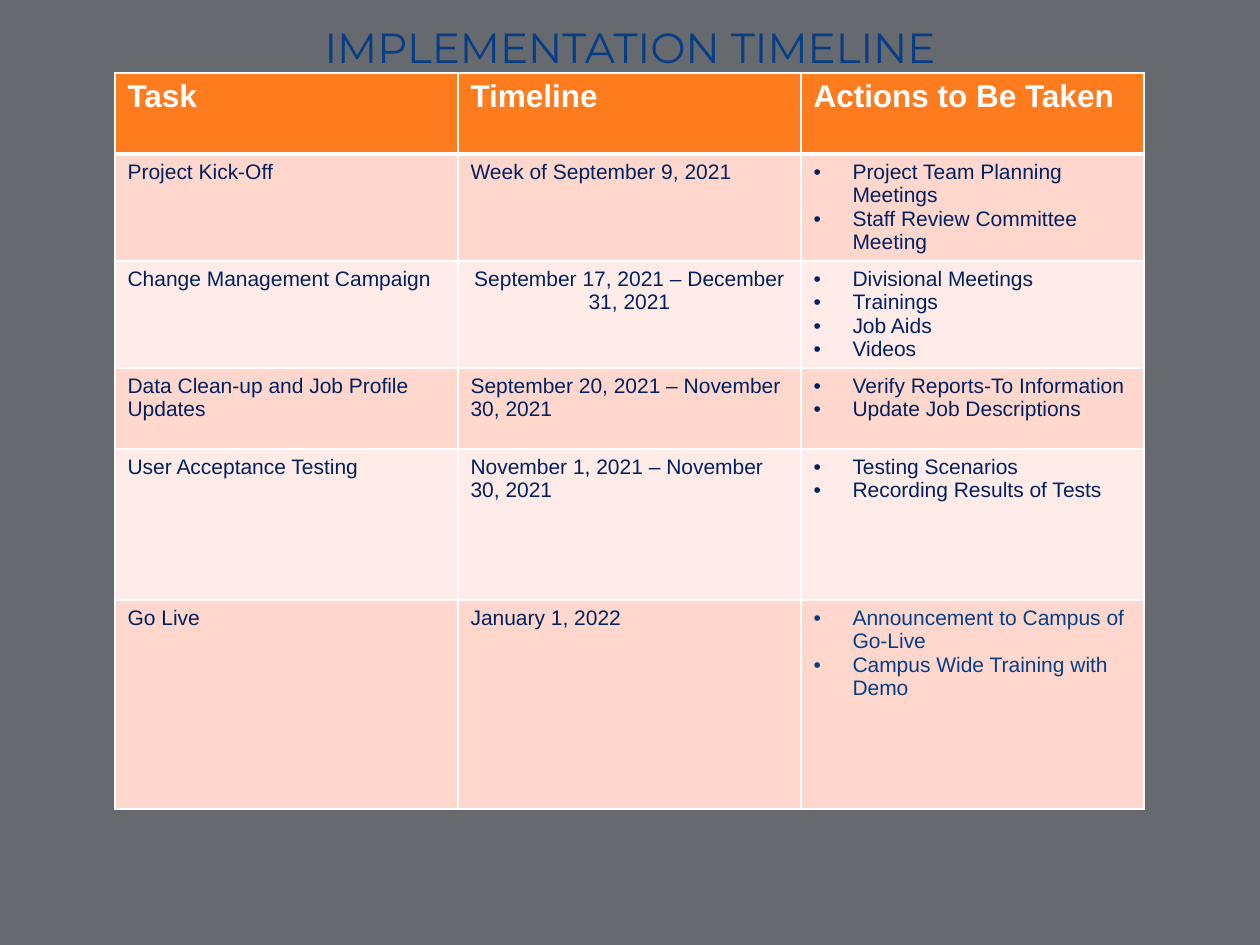
from lxml import etree
from pptx import Presentation
from pptx.dml.color import RGBColor
from pptx.enum.text import MSO_ANCHOR, MSO_AUTO_SIZE, PP_ALIGN
from pptx.oxml import parse_xml
from pptx.oxml.ns import nsdecls, qn
from pptx.util import Pt

MIDDLE, NOFIT, CENTER = MSO_ANCHOR.MIDDLE, MSO_AUTO_SIZE.NONE, PP_ALIGN.CENTER
COLORS = {"back": "66696E", "title": "053E87", "head": "FE7C1E", "white": "FFFFFF",
          "navy": "002060", "odd": "FFD7CD", "even": "FFECE8"}
HEADS = ["Task", "Timeline", "Actions to Be Taken"]
TASKS = [
    ("Project Kick-Off", "Week of September 9, 2021",
     "Project Team Planning Meetings\nStaff Review Committee Meeting"),
    ("Change Management Campaign", "September 17, 2021 – December 31, 2021",
     "Divisional Meetings\nTrainings\nJob Aids\nVideos"),
    ("Data Clean-up and Job Profile Updates", "September 20, 2021 – November 30, 2021",
     "Verify Reports-To Information\nUpdate Job Descriptions"),
    ("User Acceptance Testing", "November 1, 2021 – November 30, 2021",
     "Testing Scenarios\nRecording Results of Tests"),
    ("Go Live", "January 1, 2022",
     "Announcement to Campus of Go-Live\nCampus Wide Training with Demo"),
]
HEIGHTS = [81, 107, 107, 81, 151, 209]
COL = 343


def px(num):
    return round(num * 914400 / 126)


def style(para, face, size, color, bold=False):
    for run in para.runs:
        run.font.name, run.font.size, run.font.bold = face, Pt(size), bold
        run.font.color.rgb = RGBColor.from_string(COLORS[color])


# Slide and background
prs = Presentation()
prs.slide_width, prs.slide_height = px(1260), px(945)
slide = prs.slides.add_slide(prs.slide_layouts[5])
slide.background.fill.solid()
slide.background.fill.fore_color.rgb = RGBColor.from_string(COLORS["back"])

# Title
title = slide.shapes.title
title.left, title.top, title.width, title.height = px(63), px(4), px(1134), px(86)
frame = title.text_frame
frame.text = "IMPLEMENTATION TIMELINE"
frame.auto_size, frame.vertical_anchor = NOFIT, MIDDLE
frame.paragraphs[0].alignment = CENTER
style(frame.paragraphs[0], "Montserrat", 24, "title")

# Table grid
rows = [HEADS, *TASKS]
table = slide.shapes.add_table(len(rows), len(HEADS), px(115), px(73),
                               px(COL * len(HEADS)), px(sum(HEIGHTS))).table
for col in table.columns:
    col.width = px(COL)
for row, high in zip(table.rows, HEIGHTS):
    row.height = px(high)

# Cells: borders, fill and text
for r, row in enumerate(rows):
    for c, text in enumerate(row):
        cell = table.cell(r, c)
        props = cell._tc.get_or_add_tcPr()
        for side in "LRTB":
            thick = (r, side) in ((0, "B"), (1, "T"))
            props.append(parse_xml(
                f'<a:ln{side} {nsdecls("a")} w="{Pt(3 if thick else 1)}"><a:solidFill>'
                f'<a:srgbClr val="{COLORS["white"]}"/></a:solidFill></a:ln{side}>'))
        fill = "head" if r == 0 else "odd" if r % 2 else "even"
        cell.fill.solid()
        cell.fill.fore_color.rgb = RGBColor.from_string(COLORS[fill])
        cell.text_frame.text = text
        for para in cell.text_frame.paragraphs:
            if r == 0:
                style(para, "Arial", 18, "white", True)
                continue
            if c == 2:
                form = para._p.get_or_add_pPr()
                form.set("marL", str(px(39)))
                form.set("indent", str(px(-39)))
                etree.SubElement(form, qn("a:buFont")).set("typeface", "Arial")
                etree.SubElement(form, qn("a:buChar")).set("char", "•")
            last = r == len(TASKS) and c == 2
            style(para, "Arial", 12, "title" if last else "navy")

# The campaign dates are centred
table.cell(2, 1).text_frame.paragraphs[0].alignment = CENTER

prs.save("out.pptx")
